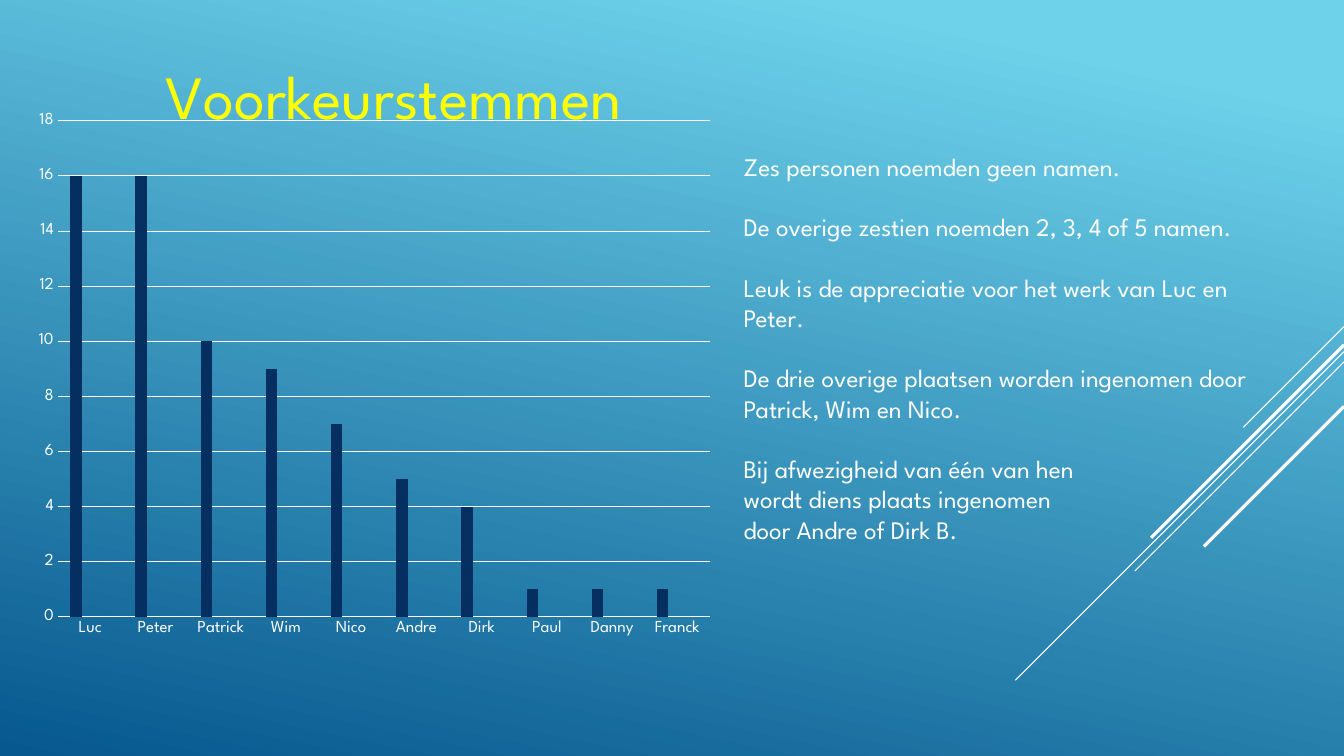
from dataclasses import dataclass

from lxml import etree
from pptx import Presentation
from pptx.chart.data import CategoryChartData
from pptx.dml.color import RGBColor
from pptx.enum.chart import XL_CHART_TYPE, XL_TICK_MARK
from pptx.enum.shapes import MSO_CONNECTOR
from pptx.enum.text import MSO_AUTO_SIZE
from pptx.oxml.ns import qn
from pptx.util import Cm, Pt

COLUMNS = XL_CHART_TYPE.COLUMN_CLUSTERED
NO_TICK = XL_TICK_MARK.NONE
STRAIGHT = MSO_CONNECTOR.STRAIGHT
GROW = MSO_AUTO_SIZE.SHAPE_TO_FIT_TEXT

FONT = "League Spartan"
WHITE = "FFFFFF"
YELLOW = "FFFF00"
WIDTH, HEIGHT = 33.87, 19.05


@dataclass(frozen=True)
class Stripe:
    """A 45° line running down and left from the right edge of the slide."""
    top: float
    run: float
    weight: float


@dataclass(frozen=True)
class Remark:
    text: str
    space_before: float = 21.6


STRIPES = (
    Stripe(8.23, 2.54, 0.75),
    Stripe(8.86, 8.28, 0.75),
    Stripe(9.12, 5.27, 0.75),
    Stripe(8.69, 4.86, 2.25),
    Stripe(10.24, 3.53, 2.25),
)
VOTES = {"Luc": 16, "Peter": 16, "Patrick": 10, "Wim": 9, "Nico": 7,
         "Andre": 5, "Dirk": 4, "Paul": 1, "Danny": 1, "Franck": 1}
SERIES_COLOURS = ("052F61", "A50E82", "14967C")
REMARKS = (
    Remark("Zes personen noemden geen namen.", 0),
    Remark("De overige zestien noemden 2, 3, 4 of 5 namen."),
    Remark("Leuk is de appreciatie voor het werk van Luc en Peter."),
    Remark("De drie overige plaatsen worden ingenomen door Patrick, Wim en Nico."),
    Remark("Bij afwezigheid van één van hen"),
    Remark("wordt diens plaats ingenomen", 0),
    Remark("door Andre of Dirk B.", 0),
)


def colour(hex_code: str) -> RGBColor:
    return RGBColor.from_string(hex_code)


def format_font(font, size: float, hex_code: str = WHITE) -> None:
    font.name = FONT
    font.size = Pt(size)
    font.bold = False
    font.color.rgb = colour(hex_code)


def format_line(line, weight: float = 0.75) -> None:
    line.color.rgb = colour(WHITE)
    line.width = Pt(weight)


def write(paragraph, text: str, *, size: float, hex_code: str = WHITE,
          space_before: float = 0) -> None:
    paragraph.space_before = Pt(space_before)
    run = paragraph.add_run()
    run.text = text
    format_font(run.font, size, hex_code)


def paint_background(slide) -> None:
    fill = slide.background.fill
    fill.gradient()
    fill.gradient_angle = 258
    for stop, position, hex_code in zip(fill.gradient_stops, (0.1, 1), ("6ED2EB", "06588E")):
        stop.position = position
        stop.color.rgb = colour(hex_code)


def draw_stripe(slide, stripe: Stripe) -> None:
    line = slide.shapes.add_connector(
        STRAIGHT, Cm(WIDTH), Cm(stripe.top),
        Cm(WIDTH - stripe.run), Cm(stripe.top + stripe.run))
    format_line(line.line, stripe.weight)
    etree.SubElement(line._element.spPr, qn("a:effectLst"))


def place_in_chart(element, **settings) -> None:
    """Give a chart part a manual layout in fractions of the chart."""
    layout = element.find(qn("c:layout"))
    if layout is None:
        layout = etree.Element(qn("c:layout"))
        element.insert(0, layout)
    manual = etree.SubElement(layout, qn("c:manualLayout"))
    for tag, value in settings.items():
        etree.SubElement(manual, qn(f"c:{tag}")).set("val", str(value))


def add_votes_chart(slide) -> None:
    data = CategoryChartData()
    data.categories = list(VOTES)
    data.add_series("Series 1", list(VOTES.values()))
    for number in (2, 3):
        data.add_series(f"Series {number}", [None] * len(VOTES))
    chart = slide.shapes.add_chart(
        COLUMNS, Cm(0.61), Cm(1.42), Cm(17.58), Cm(15.06), data).chart
    format_font(chart.font, 10)
    chart.has_legend = False

    title = chart.chart_title
    write(title.text_frame.paragraphs[0], "Voorkeurstemmen", size=44, hex_code=YELLOW)
    place_in_chart(title._element, xMode="edge", yMode="edge", x=0.186, y=0.002)
    place_in_chart(chart._chartSpace.chart.plotArea, layoutTarget="inner",
                   xMode="edge", yMode="edge", x=0.048, y=0.108, w=0.935, h=0.83)

    plot = chart.plots[0]
    plot.gap_width = 219
    plot.overlap = -27
    plot.vary_by_categories = False
    for series, hex_code in zip(plot.series, SERIES_COLOURS):
        series.format.fill.solid()
        series.format.fill.fore_color.rgb = colour(hex_code)

    names, counts = chart.category_axis, chart.value_axis
    for axis in (names, counts):
        axis.major_tick_mark = axis.minor_tick_mark = NO_TICK
        format_font(axis.tick_labels.font, 12)
    format_line(names.format.line)
    counts.format.line.fill.background()
    counts.minimum_scale, counts.maximum_scale, counts.major_unit = 0, 18, 2
    format_line(counts.major_gridlines.format.line)


def add_remarks(slide) -> None:
    frame = slide.shapes.add_textbox(Cm(18.49), Cm(3.68), Cm(13.77), Cm(11.02)).text_frame
    frame.word_wrap = True
    frame.auto_size = GROW
    for index, remark in enumerate(REMARKS):
        paragraph = frame.add_paragraph() if index else frame.paragraphs[0]
        write(paragraph, remark.text, size=18, space_before=remark.space_before)


def main() -> None:
    deck = Presentation()
    deck.slide_width, deck.slide_height = Cm(WIDTH), Cm(HEIGHT)
    slide = deck.slides.add_slide(deck.slide_layouts.get_by_name("Blank"))
    paint_background(slide)
    for stripe in STRIPES:
        draw_stripe(slide, stripe)
    add_votes_chart(slide)
    add_remarks(slide)
    deck.save("out.pptx")


if __name__ == "__main__":
    main()
